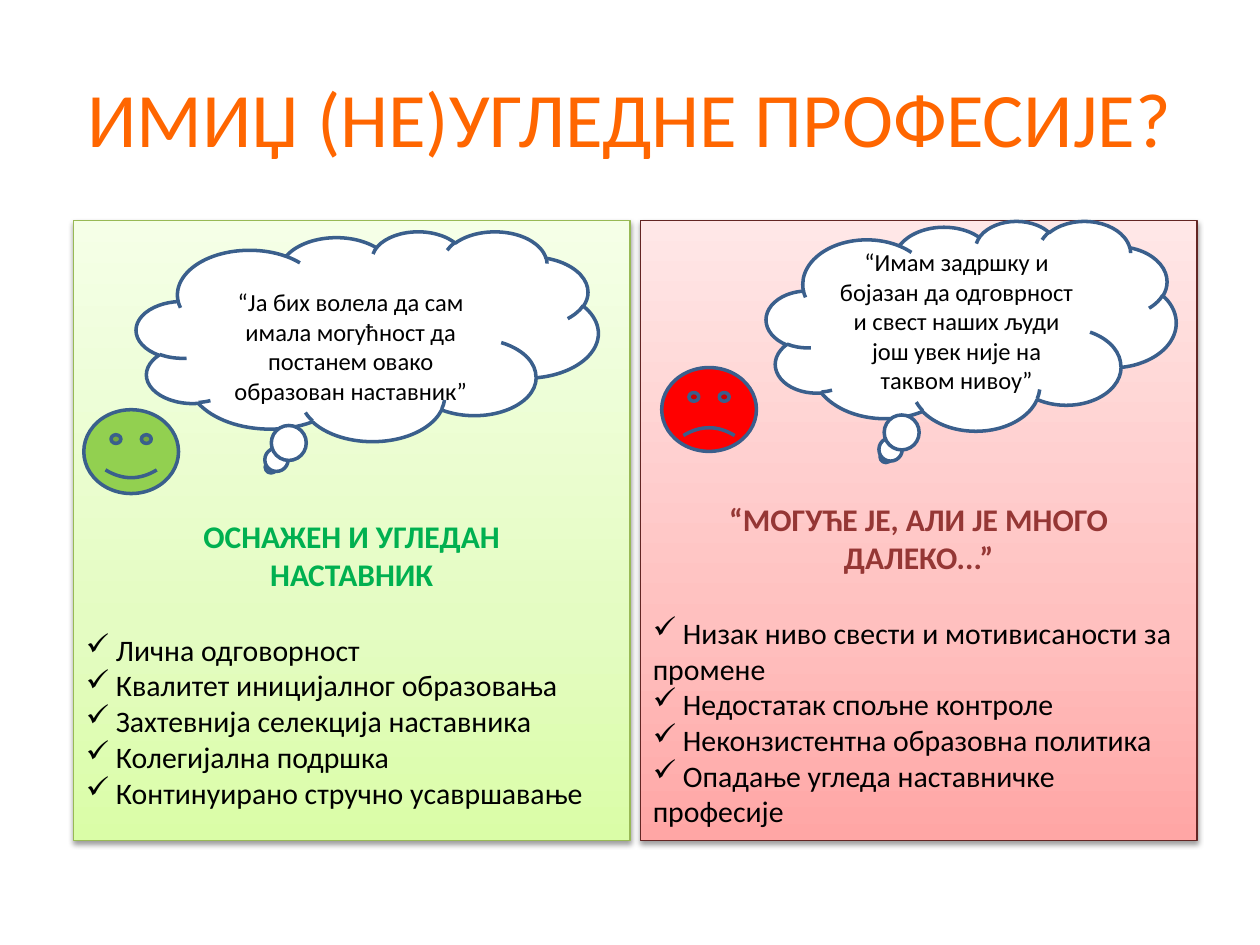
"""Build a slide that sets two views of the teaching profession side by side."""
from copy import deepcopy
from dataclasses import dataclass

from lxml import etree
from pptx import Presentation
from pptx import util as u
from pptx.dml.color import RGBColor
from pptx.enum import shapes, text
from pptx.oxml import ns

ORANGE = RGBColor(0xFF, 0x66, 0x00)
GREEN = RGBColor(0x00, 0xB0, 0x50)
MAROON = RGBColor(0x95, 0x37, 0x35)
LIME = RGBColor(0x92, 0xD0, 0x50)
RED = RGBColor(0xFF, 0x00, 0x00)
BLUE = RGBColor(0x3A, 0x5F, 0x8C)
WHITE = RGBColor(0xFF, 0xFF, 0xFF)
BLACK = RGBColor(0x00, 0x00, 0x00)
OLIVE = RGBColor(0x98, 0xB9, 0x55)
WINE = RGBColor(0x63, 0x25, 0x23)
GREENS = (RGBColor(0xDA, 0xFD, 0xA7), RGBColor(0xE4, 0xFC, 0xC2), RGBColor(0xF5, 0xFF, 0xE7))
PINKS = (RGBColor(0xFF, 0xA6, 0xA5), RGBColor(0xFF, 0xC0, 0xBF), RGBColor(0xFF, 0xE7, 0xE7))
STOPS = (0, 0.35, 1)
FONT = "Calibri"
KIND = shapes.MSO_SHAPE
ALIGN = text.PP_ALIGN
ANCHOR = text.MSO_ANCHOR


@dataclass(frozen=True)
class Box:
    left: float
    top: float
    width: float
    height: float

    def cm(self) -> tuple:
        return tuple(u.Cm(n) for n in (self.left, self.top, self.width, self.height))


@dataclass(frozen=True)
class Panel:
    box: Box
    kind: KIND
    tints: tuple
    edge: RGBColor
    inset: float
    head: str
    color: RGBColor
    items: tuple


@dataclass(frozen=True)
class Face:
    box: Box
    fill: RGBColor
    smile: float


@dataclass(frozen=True)
class Cloud:
    box: Box
    words: str
    inset: float


PANELS = (
    Panel(Box(1.48, 4.45, 11.22, 12.5), KIND.RECTANGLE, GREENS, OLIVE, 5.98,
          "ОСНАЖЕН И УГЛЕДАН\vНАСТАВНИК", GREEN,
          ("Лична одговорност",
           "Квалитет иницијалног образовања",
           "Захтевнија селекција наставника",
           "Колегијална подршка",
           "Континуирано стручно усавршавање")),
    Panel(Box(12.91, 4.45, 11.22, 12.5), KIND.FLOWCHART_PROCESS, PINKS, WINE, 5.64,
          "“МОГУЋЕ ЈЕ, АЛИ ЈЕ МНОГО ДАЛЕКО...”", MAROON,
          ("Низак ниво свести и мотивисаности за промене",
           "Недостатак спољне контроле",
           "Неконзистентна образовна политика",
           "Опадање угледа наставничке професије")),
)
FACES = (
    Face(Box(1.69, 8.26, 1.91, 1.69), LIME, 0.05),
    Face(Box(13.34, 7.41, 1.91, 1.69), RED, -0.05),
)
CLOUDS = (
    Cloud(Box(15.45, 4.45, 8.26, 4.23),
          "“Имам задршку и бојазан да одговрност и свест наших људи "
          "још увек није на таквом нивоу”", 0.13),
    Cloud(Box(2.75, 4.66, 9.31, 4.23),
          "“Ја бих волела да сам имала могућност да постанем овако "
          "образован наставник”", 0.73),
)


def write(frame, words: str, *, size: float, color: RGBColor = BLACK, bold: bool = False,
          align=ALIGN.CENTER, after: float = 0, tick: bool = False) -> None:
    frame.word_wrap = True
    para = frame.paragraphs[0]
    if para.runs:
        para = frame.add_paragraph()
    para.text = words
    para.alignment = align
    para.space_after = u.Pt(after)
    for run in para.runs:
        font = run.font
        font.name, font.size, font.bold = FONT, u.Pt(size), bold
        font.color.rgb = color
    if tick:
        props = para._p.get_or_add_pPr()
        props.set("marL", "0")
        props.set("indent", "0")
        etree.SubElement(props, ns.qn("a:buChar"), char="✓")


def add_form(slide, kind, box: Box, edge: RGBColor, width: float):
    form = slide.shapes.add_shape(kind, *box.cm())
    form.shadow.inherit = False
    form.line.color.rgb = edge
    form.line.width = u.Pt(width)
    return form


def shade(form, tints: tuple) -> None:
    form.fill.gradient()
    form.fill.gradient_angle = 90
    stops = form._element.spPr.find(".//" + ns.qn("a:gsLst"))
    stops.append(deepcopy(stops[-1]))
    for stop, place, tint in zip(form.fill.gradient_stops, STOPS, tints):
        stop.position = place
        stop.color.rgb = tint


def cast(form) -> None:
    glow = form._element.spPr.find(ns.qn("a:effectLst"))
    drop = etree.SubElement(glow, ns.qn("a:outerShdw"), blurRad="40000",
                            dist="20000", dir="5400000", rotWithShape="0")
    tone = etree.SubElement(drop, ns.qn("a:srgbClr"), val=str(BLACK))
    etree.SubElement(tone, ns.qn("a:alpha"), val="38000")


def add_panel(slide, panel: Panel) -> None:
    form = add_form(slide, panel.kind, panel.box, panel.edge, 0.75)
    shade(form, panel.tints)
    cast(form)
    frame = form.text_frame
    frame.vertical_anchor = ANCHOR.TOP
    frame.margin_top = u.Cm(panel.inset)
    write(frame, panel.head, size=18, color=panel.color, bold=True, after=22)
    for item in panel.items:
        write(frame, " " + item, size=17, align=ALIGN.LEFT, tick=True)


def add_face(slide, face: Face) -> None:
    form = add_form(slide, KIND.SMILEY_FACE, face.box, BLUE, 2)
    form.fill.solid()
    form.fill.fore_color.rgb = face.fill
    form.adjustments[0] = face.smile


def add_cloud(slide, cloud: Cloud) -> None:
    form = add_form(slide, KIND.CLOUD_CALLOUT, cloud.box, BLUE, 2)
    form.fill.solid()
    form.fill.fore_color.rgb = WHITE
    form.text_frame.vertical_anchor = ANCHOR.MIDDLE
    form.text_frame.margin_top = u.Cm(cloud.inset)
    write(form.text_frame, cloud.words, size=14)


def main() -> None:
    deck = Presentation()
    deck.slide_width, deck.slide_height = u.Cm(25.4), u.Cm(19.05)
    slide = deck.slides.add_slide(deck.slide_layouts[6])
    title = slide.shapes.add_textbox(*Box(1.27, 0.76, 22.86, 3.18).cm()).text_frame
    title.vertical_anchor = ANCHOR.MIDDLE
    write(title, "ИМИЏ (НЕ)УГЛЕДНЕ ПРОФЕСИЈЕ?", size=44, color=ORANGE)
    for panel in PANELS:
        add_panel(slide, panel)
    for face in FACES:
        add_face(slide, face)
    for cloud in CLOUDS:
        add_cloud(slide, cloud)
    deck.save("out.pptx")


if __name__ == "__main__":
    main()
